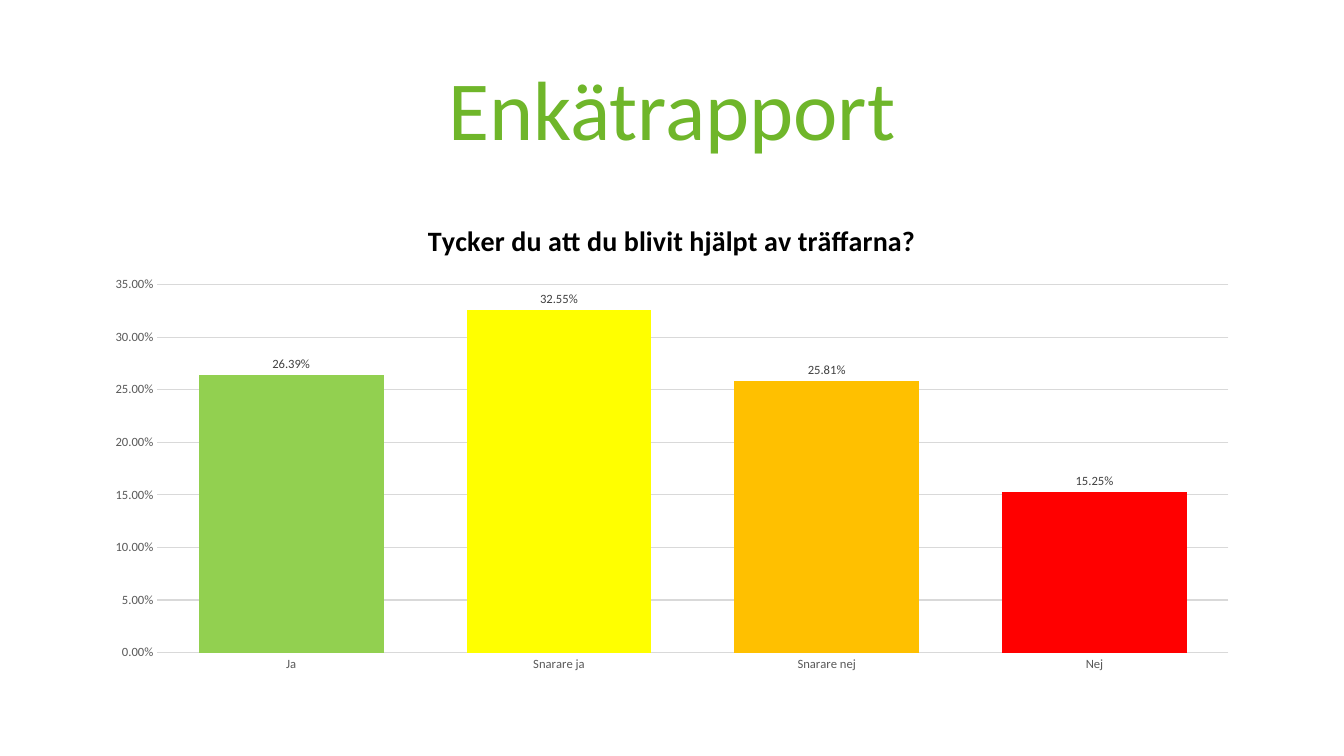
from pptx import Presentation
from pptx import util as u
from pptx.chart import data
from pptx.dml import color
from pptx.enum import chart as charts, text

FONT = "Calibri"
COLOURS = {
    "title": "6FB62A",
    "black": "000000",
    "axis": "595959",
    "label": "404040",
    "grid": "D9D9D9",
}
ANSWERS = [
    ("Ja", 0.2639, "92D050"),
    ("Snarare ja", 0.3255, "FFFF00"),
    ("Snarare nej", 0.2581, "FFC000"),
    ("Nej", 0.1525, "FF0000"),
]
LEFT, WIDTH = u.Pt(66), u.Pt(828)


def rgb(value):
    return color.RGBColor.from_string(value)


def style_font(font, size, colour, bold=False):
    font.name = FONT
    font.size = u.Pt(size)
    font.bold = bold
    font.color.rgb = rgb(colour)


def style_line(line):
    line.color.rgb = rgb(COLOURS["grid"])
    line.width = u.Pt(0.75)


def add_title(slide, wording):
    title = slide.shapes.title
    title.left, title.top, title.width, title.height = LEFT, u.Pt(28.75), WIDTH, u.Pt(104.4)
    frame = title.text_frame
    frame.vertical_anchor = text.MSO_ANCHOR.MIDDLE
    paragraph = frame.paragraphs[0]
    paragraph.alignment = text.PP_ALIGN.CENTER
    paragraph.line_spacing = 0.9
    run = paragraph.add_run()
    run.text = wording
    style_font(run.font, 60, COLOURS["title"])


def style_axes(chart):
    for axis in (chart.category_axis, chart.value_axis):
        axis.major_tick_mark = charts.XL_TICK_MARK.NONE
        axis.minor_tick_mark = charts.XL_TICK_MARK.NONE
        style_font(axis.tick_labels.font, 9, COLOURS["axis"])
    style_line(chart.category_axis.format.line)
    value_axis = chart.value_axis
    value_axis.minimum_scale, value_axis.maximum_scale = 0, 0.35
    value_axis.major_unit = 0.05
    value_axis.format.line.fill.background()
    value_axis.has_major_gridlines = True
    style_line(value_axis.major_gridlines.format.line)
    value_axis.tick_labels.number_format = "0.00%"
    value_axis.tick_labels.number_format_is_linked = False


def style_columns(plot):
    plot.gap_width = 45
    plot.overlap = -27
    plot.vary_by_categories = False
    series = plot.series[0]
    for index, (_, _, colour) in enumerate(ANSWERS):
        fill = series.points[index].format.fill
        fill.solid()
        fill.fore_color.rgb = rgb(colour)
    labels = series.data_labels
    labels.show_value = True
    labels.position = charts.XL_LABEL_POSITION.OUTSIDE_END
    labels.number_format = "0.00%"
    labels.number_format_is_linked = False
    style_font(labels.font, 9, COLOURS["label"])


def add_answer_chart(slide, question):
    chart_data = data.CategoryChartData(number_format="0.00%")
    chart_data.categories = [name for name, _, _ in ANSWERS]
    chart_data.add_series("Series 1", [share for _, share, _ in ANSWERS])
    chart = slide.shapes.add_chart(
        charts.XL_CHART_TYPE.COLUMN_CLUSTERED, LEFT, u.Pt(143.75), WIDTH, u.Pt(342.6), chart_data
    ).chart
    style_font(chart.font, 10, COLOURS["black"])
    chart.has_legend = False
    chart.has_title = True
    run = chart.chart_title.text_frame.paragraphs[0].add_run()
    run.text = question
    style_font(run.font, 20, COLOURS["black"], bold=True)
    chart.chart_title.include_in_layout = False
    style_axes(chart)
    style_columns(chart.plots[0])


def main():
    presentation = Presentation()
    presentation.slide_width, presentation.slide_height = u.Pt(960), u.Pt(540)
    slide = presentation.slides.add_slide(presentation.slide_layouts.get_by_name("Title Only"))
    add_title(slide, "Enkätrapport")
    add_answer_chart(slide, "Tycker du att du blivit hjälpt av träffarna?")
    presentation.save("out.pptx")


if __name__ == "__main__":
    main()
